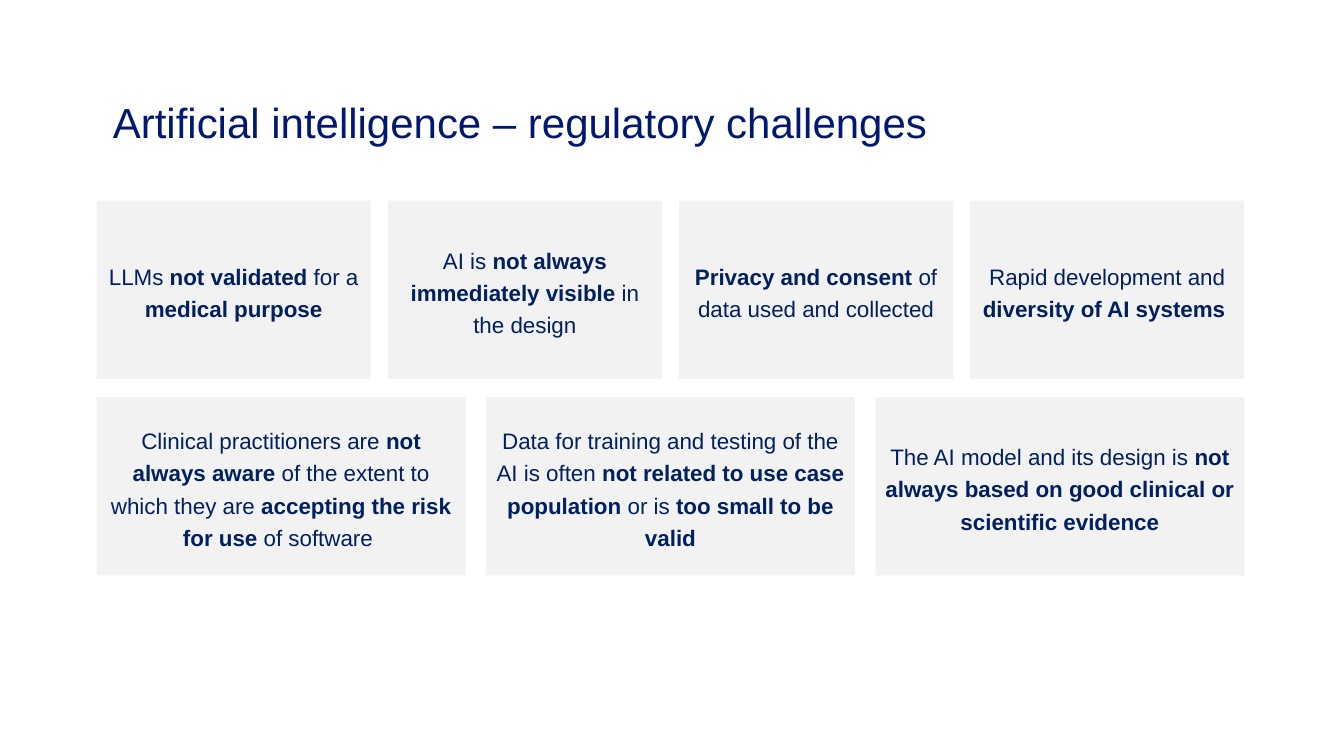
import pptx
import pptx.util
import pptx.dml.color
import pptx.enum.shapes
import pptx.enum.text

Pt = pptx.util.Pt
ALIGN = pptx.enum.text.PP_ALIGN
ANCHOR = pptx.enum.text.MSO_ANCHOR

COLORS = {"title": "001871", "card": "F2F2F2", "text": "002060"}
TITLE_FONT = {"name": "Arial", "size": Pt(30), "bold": False}
CARD_FONT = {"name": "Arial", "size": Pt(16)}

# Text between ** marks is bold
TOP_CHALLENGES = [
    "LLMs **not validated **for a **medical purpose**",
    "AI is **not always immediately visible** in the design",
    "**Privacy and consent **of data used and collected",
    "Rapid development and **diversity of AI systems **",
]
BOTTOM_CHALLENGES = [
    "Clinical practitioners are **not always aware** of the extent to which "
    "they are **accepting the risk for use** of software ",
    "Data for training and testing of the AI is often **not related to use case "
    "population** or is **too small to be valid**",
    "The AI model and its design is **not always based on good clinical or "
    "scientific evidence**",
]


def rgb(key):
    return pptx.dml.color.RGBColor.from_string(COLORS[key])


def set_all(target, values):
    for attribute, value in values.items():
        setattr(target, attribute, value)


def add_run(paragraph, text, font, color):
    run = paragraph.add_run()
    run.text = text
    set_all(run.font, font)
    run.font.color.rgb = rgb(color)


def add_title(slide, left, top, width, height, text):
    frame = slide.shapes.add_textbox(Pt(left), Pt(top), Pt(width), Pt(height)).text_frame
    set_all(frame, {"word_wrap": True, "vertical_anchor": ANCHOR.TOP,
                    "margin_left": 0, "margin_top": 0,
                    "margin_right": 0, "margin_bottom": 0})
    frame.paragraphs[0].line_spacing = 0.9
    add_run(frame.paragraphs[0], text, TITLE_FONT, "title")


def add_card(slide, left, top, width, height, text):
    card = slide.shapes.add_shape(pptx.enum.shapes.MSO_SHAPE.RECTANGLE,
                                  Pt(left), Pt(top), Pt(width), Pt(height))
    card.shadow.inherit = False
    card.fill.solid()
    card.fill.fore_color.rgb = rgb("card")
    card.line.fill.background()
    set_all(card.text_frame, {"word_wrap": True, "vertical_anchor": ANCHOR.MIDDLE})
    paragraph = card.text_frame.paragraphs[0]
    set_all(paragraph, {"alignment": ALIGN.CENTER, "line_spacing": 1.2})
    for index, part in enumerate(text.split("**")):
        if part:
            add_run(paragraph, part, {**CARD_FONT, "bold": index % 2 == 1}, "text")


def add_card_row(slide, left, top, width, height, gap, texts):
    card_width = (width - gap * (len(texts) - 1)) / len(texts)
    for column, text in enumerate(texts):
        add_card(slide, left + column * (card_width + gap), top, card_width, height, text)


def main():
    deck = pptx.Presentation()
    set_all(deck, {"slide_width": Pt(960), "slide_height": Pt(540)})
    slide = deck.slides.add_slide(deck.slide_layouts[6])

    # Heading
    add_title(slide, 80.64, 72.72, 869.76, 56.16,
              "Artificial intelligence – regulatory challenges")

    # Two rows of challenges, sharing both side edges
    add_card_row(slide, 69, 143.3, 819.8, 127.4, 12.2, TOP_CHALLENGES)
    add_card_row(slide, 69, 283.7, 819.8, 127.4, 14.6, BOTTOM_CHALLENGES)

    deck.save("out.pptx")


if __name__ == "__main__":
    main()
